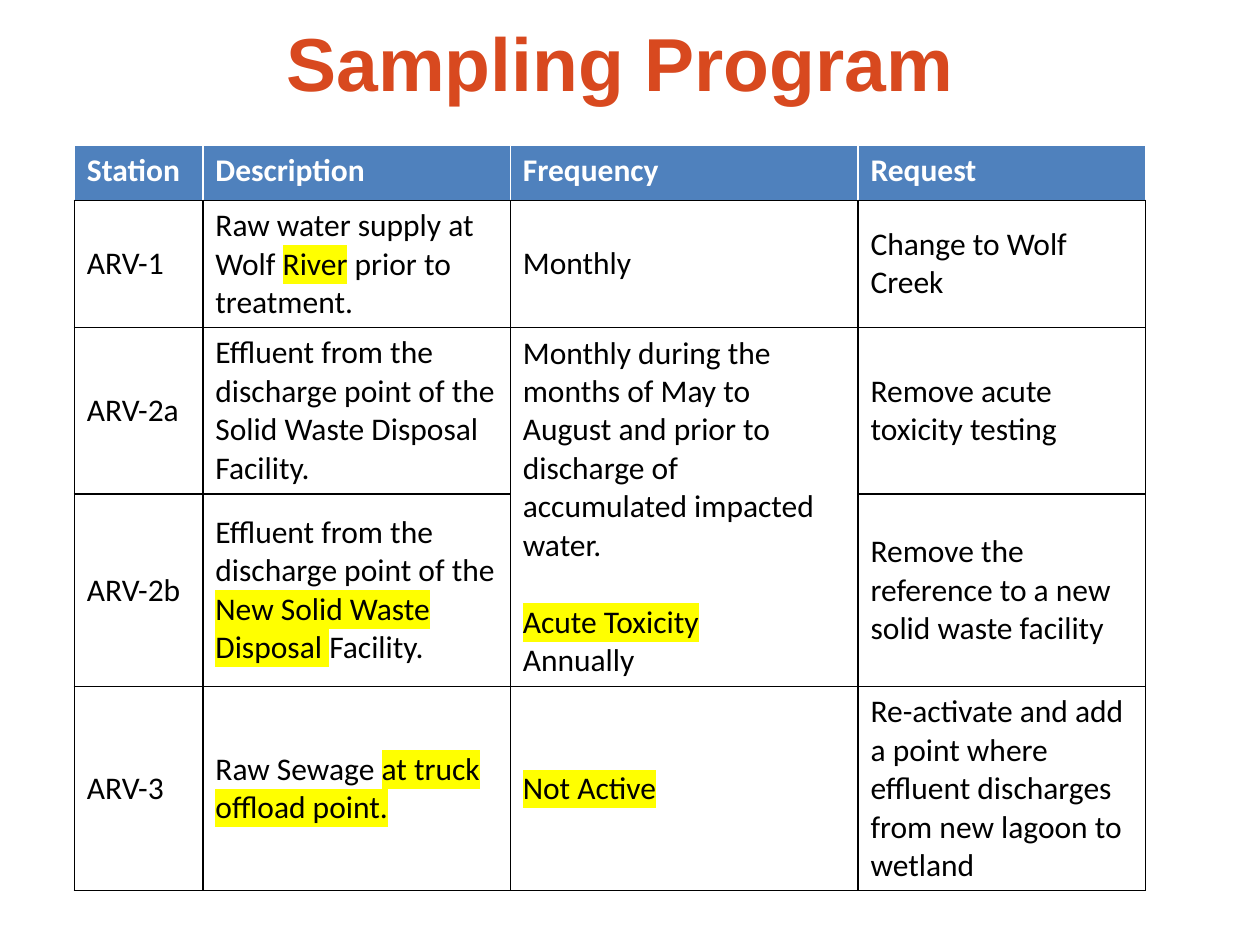
"""Build the Sampling Program slide: a title over a table of stations."""
from lxml import etree
from pptx import Presentation
from pptx.dml.color import RGBColor
from pptx.enum import text
from pptx.oxml import ns
from pptx.util import Inches, Pt

COLOURS = {"title": "D8491F", "header": "4F81BD", "white": "FFFFFF",
           "black": "000000", "highlight": "FFFF00"}
MARK = "|"
TITLE = "Sampling Program"
HEADINGS = ["Station", "Description", "Frequency", "Request"]
STATIONS = [
    [["ARV-1"], ["Raw water supply at Wolf |River| prior to treatment."],
     ["Monthly"], ["Change to Wolf Creek"]],
    [["ARV-2a"],
     ["Effluent from the discharge point of the", "Solid Waste Disposal Facility."],
     ["Monthly during the", "months of May to", "August and prior to", "discharge of",
      "accumulated impacted", "water.", "|Acute Toxicity|", "Annually"],
     ["Remove acute toxicity testing"]],
    [["ARV-2b"],
     ["Effluent from the", "discharge point of the", "|New Solid Waste|",
      "|Disposal |Facility."],
     [], ["Remove the reference to a new solid waste facility"]],
    [["ARV-3"], ["Raw Sewage |at truck|", "|offload point.|"], ["|Not Active|"],
     ["Re-activate and add a point where effluent discharges from new lagoon to wetland"]],
]
SPACE_BEFORE = {"|Acute Toxicity|": Pt(22)}
COLUMN_WIDTHS = [1.02, 2.44, 2.76, 2.28]
ROW_HEIGHTS = [0.44, 1.01, 1.32, 1.53, 1.62]
TITLE_FONT = {"name": "Arial", "size": Pt(42.9), "bold": True}
HEADING_FONT = {"name": "Calibri", "size": Pt(18), "bold": True}
BODY_FONT = HEADING_FONT | {"bold": False}


def add_run(paragraph, wording, font, colour, highlighted=False):
    run = paragraph.add_run()
    run.text = wording
    run.font.color.rgb = RGBColor.from_string(COLOURS[colour])
    for attribute, value in font.items():
        setattr(run.font, attribute, value)
    if highlighted:
        highlight = etree.Element(ns.qn("a:highlight"))
        etree.SubElement(highlight, ns.qn("a:srgbClr"), val=COLOURS["highlight"])
        run._r.get_or_add_rPr().find(ns.qn("a:latin")).addprevious(highlight)


def write_cell(cell, lines, font, colour):
    for index, line in enumerate(lines):
        frame = cell.text_frame
        paragraph = frame.add_paragraph() if index else frame.paragraphs[0]
        if line in SPACE_BEFORE:
            paragraph.space_before = SPACE_BEFORE[line]
        for part, wording in enumerate(line.split(MARK)):
            if wording:
                add_run(paragraph, wording, font, colour, part % 2 == 1)


def set_borders(cell, sides):
    properties = cell._tc.get_or_add_tcPr()
    for index, (side, colour) in enumerate(sides.items()):
        border = etree.Element(ns.qn(f"a:ln{side}"), w=str(Pt(1)))
        fill = etree.SubElement(border, ns.qn("a:solidFill"))
        etree.SubElement(fill, ns.qn("a:srgbClr"), val=COLOURS[colour])
        properties.insert(index, border)


def add_title(slide):
    title = slide.shapes.add_textbox(Inches(1.14), Inches(0.01), Inches(7.56), Inches(0.95))
    frame = title.text_frame
    frame.word_wrap = True
    frame.vertical_anchor = text.MSO_ANCHOR.MIDDLE
    frame.paragraphs[0].alignment = text.PP_ALIGN.CENTER
    add_run(frame.paragraphs[0], TITLE, TITLE_FONT, "title")


def add_stations(slide):
    rows = [[[heading] for heading in HEADINGS]] + STATIONS
    table = slide.shapes.add_table(
        len(rows), len(HEADINGS), Inches(0.59), Inches(1.15),
        Inches(sum(COLUMN_WIDTHS)), Inches(sum(ROW_HEIGHTS))).table
    table.horz_banding = False
    for column, width in zip(table.columns, COLUMN_WIDTHS):
        column.width = Inches(width)
    for row, height in zip(table.rows, ROW_HEIGHTS):
        row.height = Inches(height)
    for r, row in enumerate(rows):
        header = r == 0
        edge = "white" if header else "black"
        for c, lines in enumerate(row):
            cell = table.cell(r, c)
            cell.fill.solid()
            cell.fill.fore_color.rgb = RGBColor.from_string(
                COLOURS["header" if header else "white"])
            cell.vertical_anchor = text.MSO_ANCHOR.TOP if header else text.MSO_ANCHOR.MIDDLE
            set_borders(cell, {"L": edge, "R": edge, "T": edge, "B": "black"})
            write_cell(cell, lines, HEADING_FONT if header else BODY_FONT, edge)
    table.cell(2, 2).merge(table.cell(3, 2))


def main():
    deck = Presentation()
    deck.slide_width, deck.slide_height = Inches(10), Inches(7.5)
    slide = deck.slides.add_slide(deck.slide_layouts[6])
    add_title(slide)
    add_stations(slide)
    deck.save("out.pptx")


if __name__ == "__main__":
    main()
